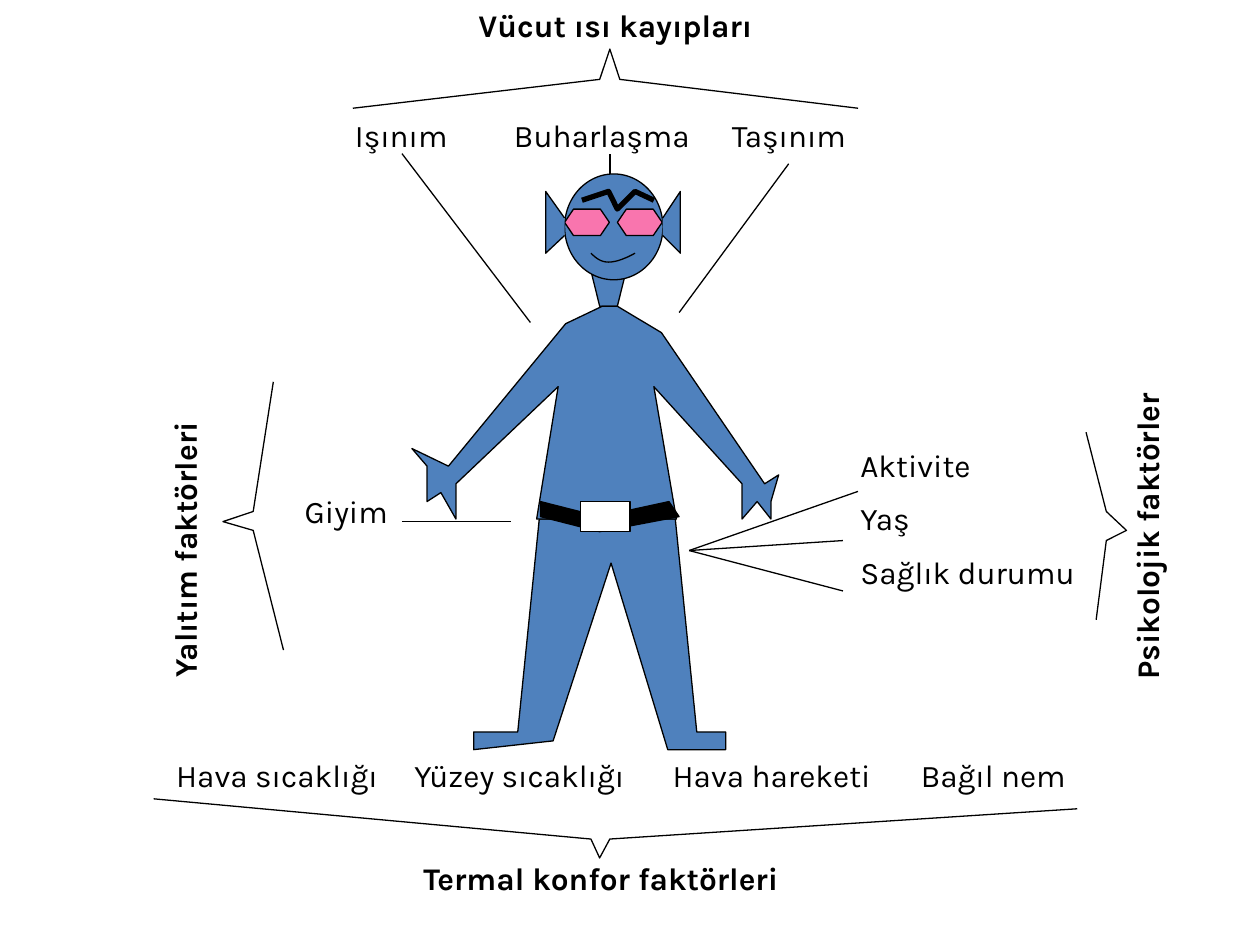
from dataclasses import dataclass

from lxml.etree import SubElement
from pptx import Presentation
from pptx.dml.color import RGBColor
from pptx.enum.shapes import MSO_CONNECTOR as Connector, MSO_SHAPE as Preset
from pptx.enum.text import MSO_AUTO_SIZE as AutoSize, PP_ALIGN as Align
from pptx.oxml.ns import qn
from pptx.util import Pt

COLORS = {"ink": "000000", "skin": "4F81BD", "lens": "F975AE", "buckle": "FFFFFF"}
FONT = "Karla"
Point = tuple[float, float]


@dataclass(frozen=True)
class Label:
    lines: tuple[str, ...]
    left: float
    top: float
    width: float
    height: float = 31
    heading: bool = False
    centered: bool = False
    rotation: float = 0


@dataclass(frozen=True)
class Outline:
    points: tuple[Point, ...]
    fill: str | None = None
    closed: bool = False
    weight: float = 0.75


@dataclass(frozen=True)
class Part:
    preset: Preset
    left: float
    top: float
    width: float
    height: float
    fill: str


def rgb(name: str) -> RGBColor:
    return RGBColor.from_string(COLORS[name])


def paint(shape, fill: str | None, weight: float = 0.75) -> None:
    shape.shadow.inherit = False
    if fill:
        shape.fill.solid()
        shape.fill.fore_color.rgb = rgb(fill)
    else:
        shape.fill.background()
    shape.line.color.rgb = rgb("ink")
    shape.line.width = Pt(weight)


def draw_outline(shapes, outline: Outline) -> None:
    start, *rest = [(Pt(x), Pt(y)) for x, y in outline.points]
    builder = shapes.build_freeform(*start, scale=1.0)
    builder.add_line_segments(rest, close=outline.closed)
    paint(builder.convert_to_shape(), outline.fill, outline.weight)


def draw_part(shapes, part: Part) -> None:
    frame = map(Pt, (part.left, part.top, part.width, part.height))
    paint(shapes.add_shape(part.preset, *frame), part.fill)


def draw_pointer(shapes, start: Point, end: Point) -> None:
    pointer = shapes.add_connector(Connector.STRAIGHT, *map(Pt, start + end))
    pointer.line.color.rgb = rgb("ink")
    pointer.line.width = Pt(0.75)
    SubElement(pointer._element.spPr, qn("a:effectLst"))


def draw_label(shapes, label: Label) -> None:
    box = shapes.add_textbox(*map(Pt, (label.left, label.top, label.width, label.height)))
    box.rotation = label.rotation
    frame = box.text_frame
    frame.word_wrap = True
    frame.auto_size = AutoSize.SHAPE_TO_FIT_TEXT
    for index, line in enumerate(label.lines):
        paragraph = frame.add_paragraph() if index else frame.paragraphs[0]
        paragraph.alignment = Align.CENTER if label.centered else Align.LEFT
        if index:
            paragraph.space_before = Pt(9)
        run = paragraph.add_run()
        run.text = line
        run.font.name = FONT
        run.font.size = Pt(18)
        run.font.bold = label.heading
        run.font.color.rgb = rgb("ink")


def curve(a: Point, b: Point, c: Point, d: Point, steps: int = 8) -> tuple[Point, ...]:
    def at(t: float) -> Point:
        weights = ((1 - t) ** 3, 3 * t * (1 - t) ** 2, 3 * t * t * (1 - t), t**3)
        x, y = (sum(w * p[axis] for w, p in zip(weights, (a, b, c, d))) for axis in (0, 1))
        return x, y

    return tuple(at(step / steps) for step in range(steps + 1))


def ear(inner: float, outer: float) -> Outline:
    return Outline(((inner, 124.6), (outer, 109.4), (outer, 144.7), (inner, 134.6)), "skin")


NECK = Outline(((342.7, 175), (337.7, 154.8), (357.8, 154.8), (352.8, 175)), "skin", True)
HEAD = Part(Preset.OVAL, 322.6, 99.4, 56.2, 60.5, "skin")
LEGS = Outline((
    (308.2, 296.6), (295.9, 418.3), (270.7, 418.3), (270.7, 428.4), (316.1, 423.4),
    (349.2, 321.8), (381.6, 428.4), (414.7, 428.4), (414.7, 418.3), (398.2, 418.3),
    (385.9, 296.6)), "skin", True)
TORSO = Outline((
    (306.7, 296.6), (319, 221), (260.6, 276.5), (260.6, 296.6), (252, 281.5),
    (244.1, 286.6), (244.1, 266.4), (235.4, 256.3), (256.3, 266.4), (323.3, 185),
    (344.2, 175), (352.8, 175), (378, 190.1), (437, 276.5), (445, 271.4),
    (440.6, 286.6), (440.6, 296.6), (432.7, 286.6), (424.1, 296.6), (424.1, 276.5),
    (373.7, 221), (386.6, 296.6)), "skin", True)
LENSES = [Part(Preset.FLOWCHART_PREPARATION, left, 119.5, 25.6, 15.1, "lens")
          for left in (322.6, 352.8)]
SMILE = Outline(
    curve((337.7, 144.7), (340.6, 147.6), (343.4, 149.8), (347.8, 149.8))
    + curve((347.8, 149.8), (352.1, 149.8), (357.8, 147.6), (362.9, 144.7))[1:])
BROW = Outline(((332.6, 114.5), (347.8, 109.4), (352.8, 119.5), (362.9, 109.4),
                (373.7, 114.5)), weight=3)
BELT = Outline(((308.9, 286.6), (342.7, 295.2), (382.3, 286.6), (388.1, 295.2),
                (342.7, 303.8), (308.9, 295.2)), "ink", True)
BUCKLE = Part(Preset.RECTANGLE, 331.9, 286.6, 28.1, 17.3, "buckle")
FIGURE = [NECK, HEAD, LEGS, TORSO, *LENSES, SMILE, ear(378.7, 388.8), ear(322.6, 311.8),
          BROW, BELT, BUCKLE]

BRACES = [
    Outline(((201.6, 61.9), (342.7, 45.4), (348.5, 28.1), (354.2, 45.4), (490.3, 61.9))),
    Outline(((156.2, 218.2), (144.7, 292.3), (127.4, 298.1), (144.7, 303.1), (162, 371.5))),
    Outline(((87.8, 456.5), (337.7, 479.5), (342.7, 490.3), (348.5, 479.5), (615.6, 462.2))),
    Outline(((620.6, 247), (632.2, 292.3), (643.7, 303.1), (632.2, 308.9), (626.4, 354.2))),
]

HIP = (393.8, 314.6)
POINTERS = [
    *((HIP, end) for end in ((490.3, 280.8), (481.7, 308.9), (481.7, 337.7))),
    ((229.7, 298.1), (292.3, 298.1)),
    ((229.7, 87.8), (303.1, 184.3)),
    ((450.7, 93.6), (388.1, 178.6)),
    ((348.5, 99.4), (348.5, 87.8)),
]

HEAT_LOSSES = [Label((text,), left, 62.6, width) for text, left, width in (
    ("Işınım", 195.8, 79.2), ("Buharlaşma", 286.6, 118.8), ("Taşınım", 411.1, 85))]
COMFORT = [Label((text,), left, 428.4, width) for text, left, width in (
    ("Hava sıcaklığı", 93.6, 141.8), ("Yüzey sıcaklığı", 229.7, 158.4),
    ("Hava hareketi", 377.3, 147.6), ("Bağıl nem", 519.1, 108))]
LABELS = [
    Label(("Aktivite", "Yaş", "Sağlık durumu"), 484.6, 251.3, 153.4, 103),
    Label(("Giyim",), 167, 277.9, 73.4),
    *HEAT_LOSSES,
    *COMFORT,
    Label(("Vücut ısı kayıpları",), 235.4, 0, 232.6, heading=True, centered=True),
    Label(("Termal konfor faktörleri",), 156.2, 487.4, 374.4, heading=True, centered=True),
    Label(("Psikolojik faktörler",), 534.2, 290.9, 244.1, heading=True, centered=True,
          rotation=270),
    Label(("Yalıtım faktörleri",), 7.2, 279.4, 198.7, heading=True, rotation=270),
]


def main() -> None:
    """Build the thermal comfort slide."""
    deck = Presentation()
    deck.slide_width, deck.slide_height = Pt(720), Pt(540)
    shapes = deck.slides.add_slide(deck.slide_layouts[6]).shapes
    for piece in FIGURE + BRACES:
        draw = draw_part if isinstance(piece, Part) else draw_outline
        draw(shapes, piece)
    for start, end in POINTERS:
        draw_pointer(shapes, start, end)
    for label in LABELS:
        draw_label(shapes, label)
    deck.save("out.pptx")


if __name__ == "__main__":
    main()
